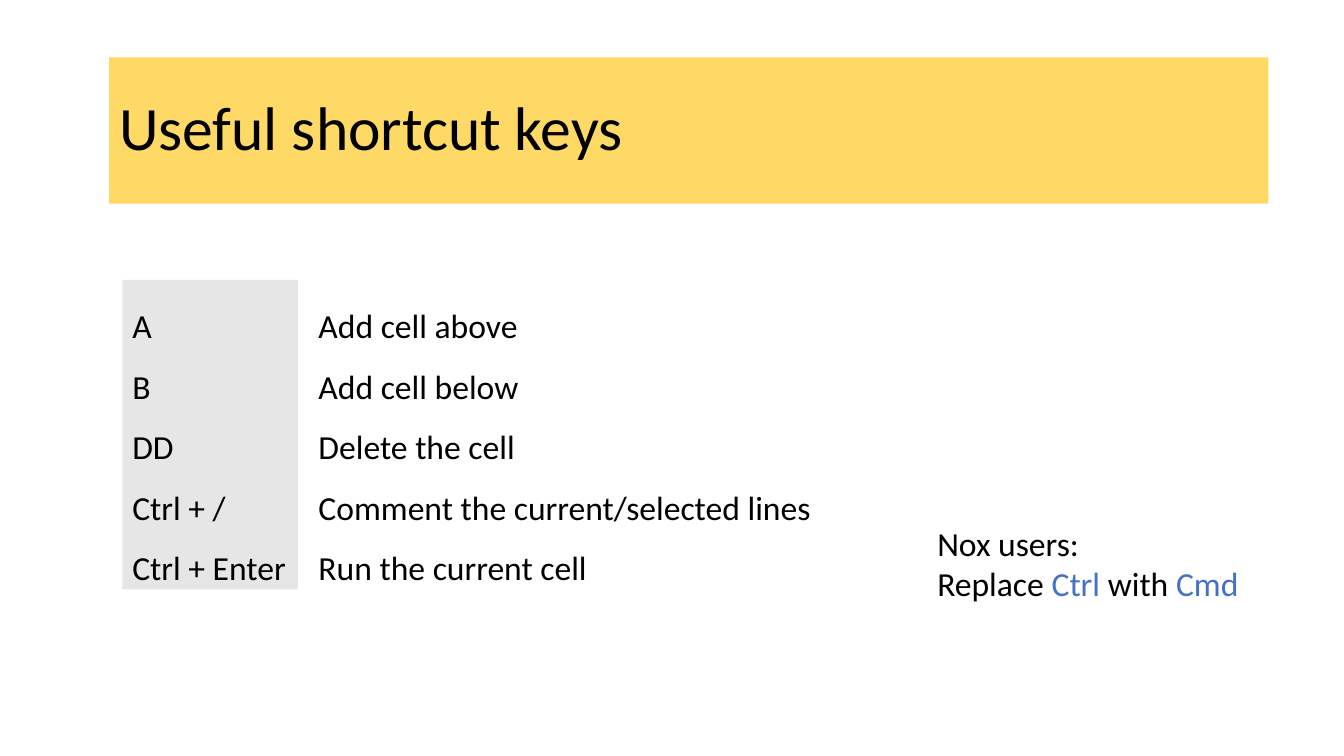
from pptx import Presentation
from pptx.dml.color import RGBColor
from pptx.enum.shapes import MSO_SHAPE
from pptx.enum.text import MSO_ANCHOR, MSO_AUTO_SIZE, PP_ALIGN
from pptx.util import Pt

RECTANGLE = MSO_SHAPE.RECTANGLE
TOP, MIDDLE = MSO_ANCHOR.TOP, MSO_ANCHOR.MIDDLE
FIT_SHAPE, FIXED = MSO_AUTO_SIZE.SHAPE_TO_FIT_TEXT, MSO_AUTO_SIZE.NONE
LEFT = PP_ALIGN.LEFT

BLACK, BLUE, YELLOW, GRAY = "000000", "4472C4", "FFD966", "E7E6E6"

SHORTCUTS = [
    ("A", "Add cell above"),
    ("B", "Add cell below"),
    ("DD", "Delete the cell"),
    ("Ctrl + /", "Comment the current/selected lines"),
    ("Ctrl + Enter", "Run the current cell"),
]


def color(value):
    return RGBColor.from_string(value)


def add_span(para, text, font="Calibri", size=24, ink=BLACK):
    span = para.add_run()
    span.text = text
    span.font.name = font
    span.font.size = Pt(size)
    span.font.color.rgb = color(ink)


class SlideBuilder:
    def __init__(self, page):
        self.page = page

    def fill_text(self, box, lines, size=24, spacing=1.0, anchor=TOP, wrap=False):
        frame = box.text_frame
        frame.word_wrap = wrap
        frame.auto_size = FIXED if wrap else FIT_SHAPE
        frame.vertical_anchor = anchor
        for index, spans in enumerate(lines):
            para = frame.add_paragraph() if index else frame.paragraphs[0]
            para.alignment = LEFT
            para.line_spacing = spacing
            for text, ink in spans:
                add_span(para, text, size=size, ink=ink)

    def panel(self, left, top, width, height, fill, lines, **style):
        box = self.page.shapes.add_shape(
            RECTANGLE, Pt(left), Pt(top), Pt(width), Pt(height))
        box.shadow.inherit = False
        box.fill.solid()
        box.fill.fore_color.rgb = color(fill)
        box.line.fill.background()
        self.fill_text(box, lines, **style)

    def label(self, left, top, width, height, lines, **style):
        box = self.page.shapes.add_textbox(
            Pt(left), Pt(top), Pt(width), Pt(height))
        self.fill_text(box, lines, **style)


def main():
    deck = Presentation()
    deck.slide_width, deck.slide_height = Pt(960), Pt(540)
    builder = SlideBuilder(deck.slides.add_slide(deck.slide_layouts[6]))

    keys = [[(key, BLACK)] for key, action in SHORTCUTS]
    actions = [[(action, BLACK)] for key, action in SHORTCUTS]
    list_top, list_height = 200, 221

    builder.panel(87.4, list_top, 125.5, list_height, GRAY, keys, spacing=1.5)
    builder.panel(78, 41, 828, 104.4, YELLOW,
                  [[("Useful shortcut keys", BLACK)]],
                  size=44, spacing=0.9, anchor=MIDDLE, wrap=True)
    builder.label(220.4, list_top, 369.5, list_height, actions, spacing=1.5)
    builder.label(662.4, 370, 231, 65.4, [
        [("Nox users:", BLACK)],
        [("Replace ", BLACK), ("Ctrl", BLUE), (" with ", BLACK), ("Cmd", BLUE)],
    ])

    deck.save("out.pptx")


if __name__ == "__main__":
    main()
